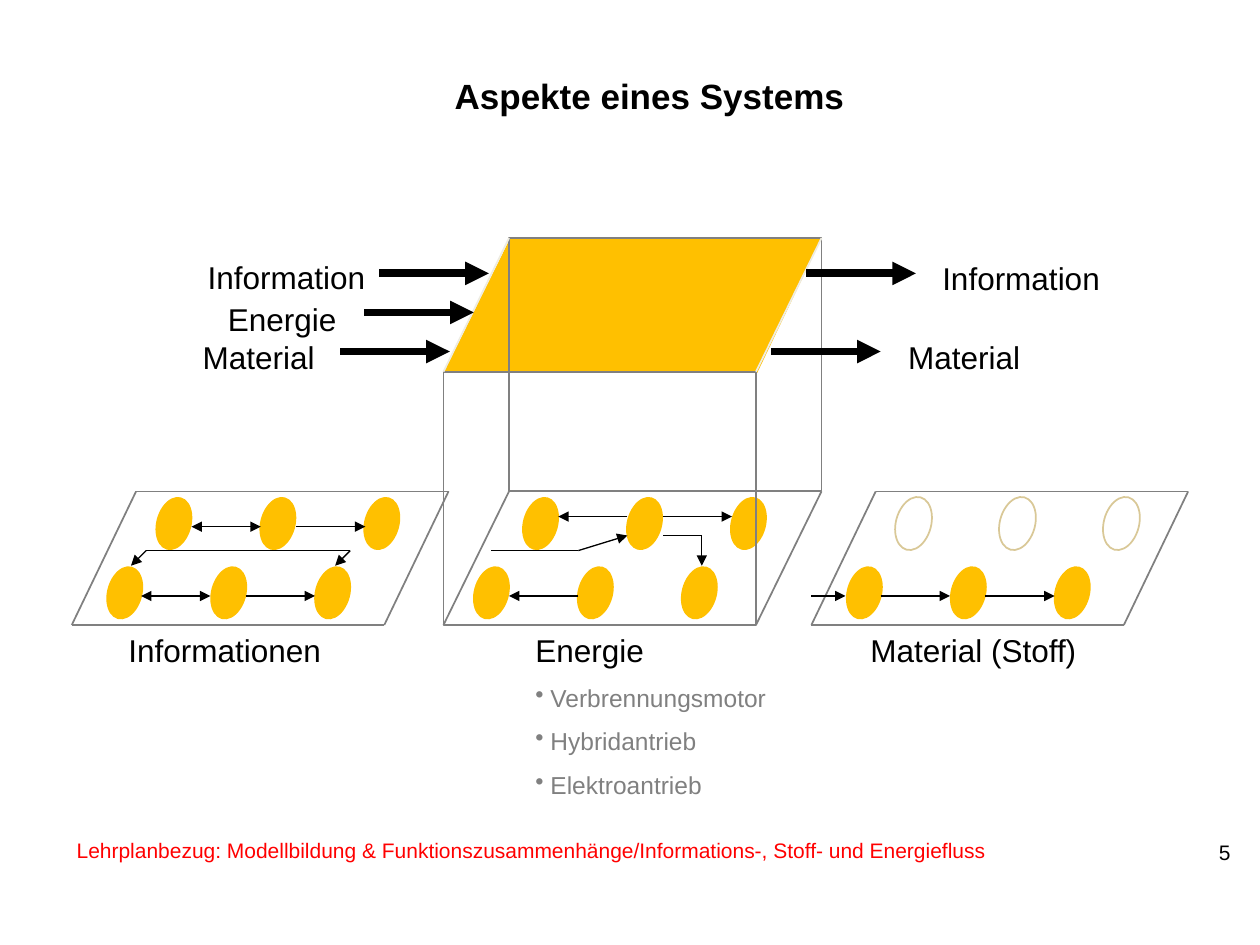
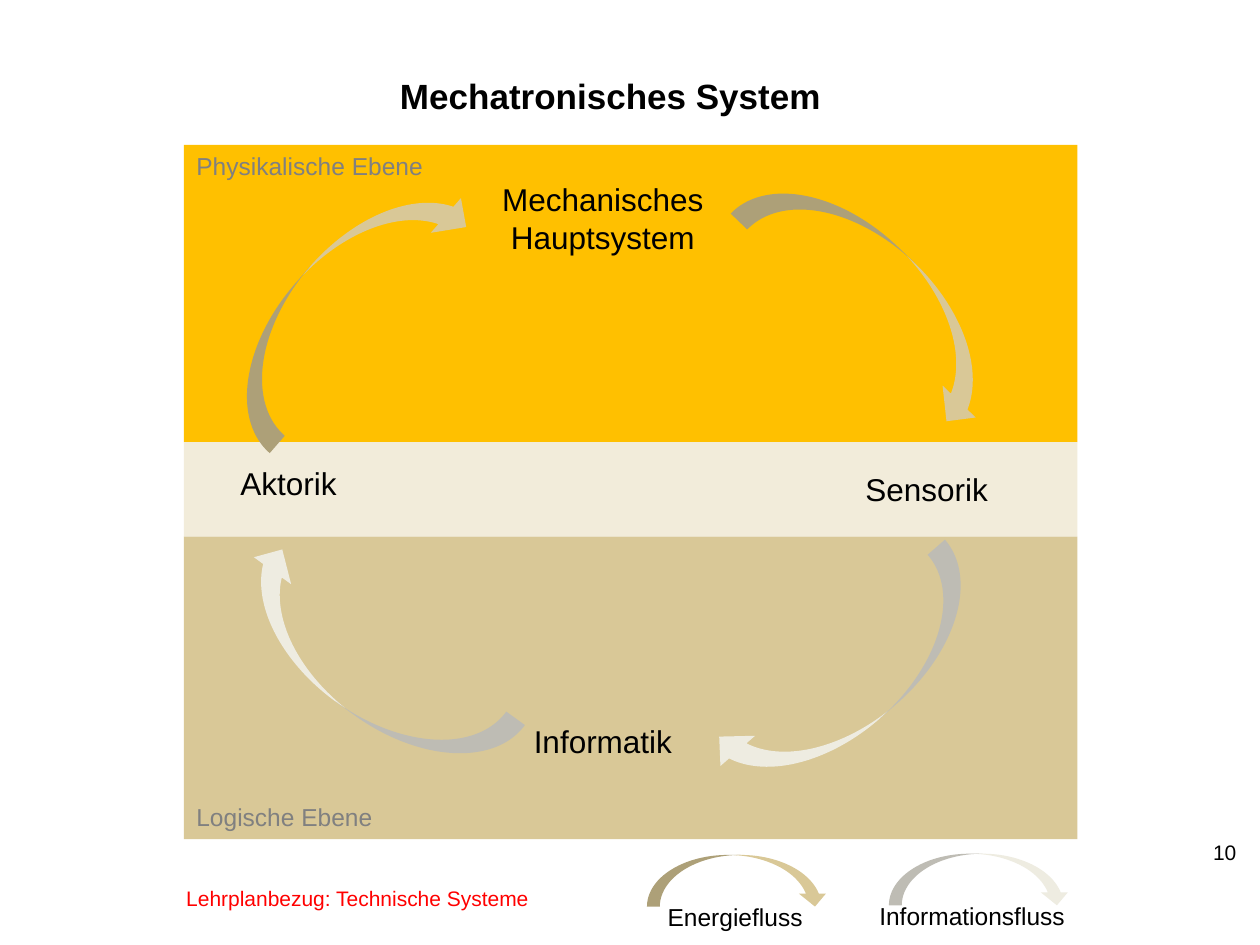
from lxml import etree
from pptx import Presentation
from pptx.dml.color import RGBColor
from pptx.enum.shapes import MSO_CONNECTOR, MSO_SHAPE
from pptx.enum.text import MSO_ANCHOR, PP_ALIGN
from pptx.oxml.ns import qn
from pptx.util import Inches, Pt

LEFT, CENTER = PP_ALIGN.LEFT, PP_ALIGN.CENTER
TOP, MIDDLE = MSO_ANCHOR.TOP, MSO_ANCHOR.MIDDLE
OVAL, RECT = MSO_SHAPE.OVAL, MSO_SHAPE.RECTANGLE
CURVED = MSO_SHAPE.CURVED_LEFT_ARROW
STRAIGHT = MSO_CONNECTOR.STRAIGHT

FONT = "Arial"
BLACK, GRAY, RED = "000000", "808080", "FF0000"
GOLD, SAND, CREAM, PALE = "FFC000", "D9C897", "F2ECDA", "EEECE1"


def rgb(code):
    """Turn a hex string into a colour."""
    return RGBColor.from_string(code)


def add_text(slide, box, lines, size=18, color=BLACK, bold=False,
             align=LEFT, anchor=TOP):
    """Add a text box with one paragraph per line."""
    frame = slide.shapes.add_textbox(*map(Inches, box)).text_frame
    frame.word_wrap = True
    frame.vertical_anchor = anchor
    for i, line in enumerate(lines):
        para = frame.paragraphs[0] if i == 0 else frame.add_paragraph()
        para.alignment = align
        add_run(para, line, size, color, bold)
    return frame


def add_run(para, text, size, color, bold=False):
    """Add one styled run to a paragraph."""
    run = para.add_run()
    run.text = text
    run.font.name = FONT
    run.font.size = Pt(size)
    run.font.bold = bold
    run.font.color.rgb = rgb(color)


def add_bullet(frame, text):
    """Add a small gray bullet line to a text frame."""
    para = frame.add_paragraph()
    para.space_before = Pt(8)
    props = para._p.get_or_add_pPr()
    props.set("marL", str(Inches(0.12)))
    props.set("indent", str(-Inches(0.12)))
    etree.SubElement(props, qn("a:buChar"), char="•")
    add_run(para, text, 14, GRAY)


def paint(shape, fill=None, line=None):
    """Set fill and outline of a shape and drop its shadow."""
    shape.shadow.inherit = False
    if fill:
        shape.fill.solid()
        shape.fill.fore_color.rgb = rgb(fill)
    else:
        shape.fill.background()
    if line:
        shape.line.color.rgb = rgb(line)
        shape.line.width = Pt(1)
    else:
        shape.line.fill.background()


def add_shape(slide, kind, box, fill=None, line=None, turn=0):
    """Add a painted preset shape."""
    shape = slide.shapes.add_shape(kind, *map(Inches, box))
    shape.rotation = turn
    paint(shape, fill, line)
    return shape


def add_line(slide, start, end, color=BLACK, width=0.75, ends=()):
    """Add a straight line with triangles at the named ends."""
    line = slide.shapes.add_connector(STRAIGHT, *map(Inches, start + end))
    line.line.color.rgb = rgb(color)
    line.line.width = Pt(width)
    for name in ends:
        etree.SubElement(line.line._get_or_add_ln(), qn("a:" + name), type="triangle")
    etree.SubElement(line._element.spPr, qn("a:effectLst"))


def add_arrow(slide, start, end, width=0.75, both=False):
    """Add an arrow, pointing both ways if asked."""
    ends = ("headEnd", "tailEnd") if both else ("tailEnd",)
    add_line(slide, start, end, width=width, ends=ends)


def add_frame(slide, title, left, page, note, spot):
    """Add title, page number and curriculum note."""
    add_text(slide, (left, 0.32, 5.51, 0.87), [title], 20, bold=True,
             align=CENTER, anchor=MIDDLE)
    add_text(slide, (9.48, 6.5, 0.48, 0.52), [page], 12, align=CENTER, anchor=MIDDLE)
    add_text(slide, spot, ["Lehrplanbezug: " + note], 12, RED)


def add_nodes(slide, left, hollow=False):
    """Add two shifted rows of three tilted nodes."""
    for i in range(3):
        x = left + 0.825 * i
        upper = (None, SAND) if hollow else (GOLD, None)
        add_shape(slide, OVAL, (x, 3.94, 0.28, 0.43), *upper, turn=15)
        add_shape(slide, OVAL, (x - 0.39, 4.49, 0.28, 0.43), GOLD, turn=15)


def add_plane(slide, left):
    """Add the slanted outline of a plane."""
    points = [(left, 4.96), (left + 2.48, 4.96), (left + 2.99, 3.9), (left + 0.51, 3.9)]
    for start, end in zip(points, points[1:] + points[:1]):
        add_line(slide, start, end, GRAY, 1)


def add_box(slide):
    """Add the see-through box with its golden lid."""
    points = [(3.52, 2.96), (4.05, 1.89), (6.52, 1.89), (6.01, 2.96)]
    spots = [(Inches(x), Inches(y)) for x, y in points]
    form = slide.shapes.build_freeform(*spots[0])
    form.add_line_segments(spots[1:], close=True)
    paint(form.convert_to_shape(), GOLD)
    add_nodes(slide, 4.15)
    for x, y in ((3.52, 2.95), (4.04, 1.89)):
        add_shape(slide, RECT, (x, y, 2.48, 2.01), line=GRAY)
    for y, color in ((4.96, GRAY), (2.95, PALE)):
        for x in (3.52, 6):
            add_line(slide, (x, y), (x + 0.52, y - 1.06), color, 1)


def add_flows(slide):
    """Add the thin arrows between the nodes."""
    for y, x in ((4.18, 1.52), (4.73, 1.12)):
        add_arrow(slide, (x, y), (x + 0.55, y), both=True)
        add_arrow(slide, (x + 0.83, y), (x + 1.38, y))
    add_line(slide, (1.16, 4.37), (2.78, 4.37))
    for x in (1.16, 2.78):
        add_arrow(slide, (x, 4.37), (x - 0.12, 4.49))

    add_line(slide, (3.9, 4.37), (4.59, 4.37))
    add_line(slide, (5.57, 4.25), (5.26, 4.25))
    for start, end in (((4.59, 4.37), (4.98, 4.25)), ((4.98, 4.1), (4.43, 4.1)),
                       ((5.26, 4.1), (5.81, 4.1)), ((4.59, 4.73), (4.04, 4.73)),
                       ((5.57, 4.25), (5.57, 4.49))):
        add_arrow(slide, start, end)

    for x, end in ((6.44, 6.71), (6.99, 7.54), (7.82, 8.37)):
        add_arrow(slide, (x, 4.73), (end, 4.73))


def add_aspects(slide):
    """Fill the slide on the aspects of a system."""
    add_frame(slide, "Aspekte eines Systems", 2.4, "5",
              "Modellbildung & Funktionszusammenhänge/Informations-, "
              "Stoff- und Energiefluss", (0.51, 6.6, 8.35, 0.3))
    add_box(slide)
    add_plane(slide, 0.57)
    add_nodes(slide, 1.24)
    add_plane(slide, 6.44)
    add_nodes(slide, 7.11, hollow=True)
    add_flows(slide)
    for x, y in ((3.01, 2.17), (2.89, 2.48), (2.7, 2.79), (6.4, 2.17), (6.12, 2.79)):
        add_arrow(slide, (x, y), (x + 0.87, y), 4.5)
    for word, x, y in (("Information", 1.55, 2), ("Energie", 1.71, 2.33),
                       ("Material", 1.51, 2.63), ("Information", 7.38, 2.01),
                       ("Material", 7.11, 2.63), ("Informationen", 0.92, 4.96),
                       ("Material (Stoff)", 6.81, 4.96)):
        add_text(slide, (x, y, 2.05, 0.4), [word])
    drives = add_text(slide, (4.15, 4.96, 2.09, 1.46), ["Energie"])
    for word in ("Verbrennungsmotor", "Hybridantrieb", "Elektroantrieb"):
        add_bullet(drives, word)


def add_cycle(slide):
    """Fill the slide on the mechatronic system."""
    for y, height, color in ((1.15, 2.36, GOLD), (3.51, 0.75, CREAM), (4.26, 2.4, SAND)):
        add_shape(slide, RECT, (1.46, y, 7.09, height), color)
    add_frame(slide, "Mechatronisches System", 2.09, "10",
              "Technische Systeme", (1.38, 6.98, 3.86, 0.3))
    for y, word in ((1.15, "Physikalische Ebene"), (6.32, "Logische Ebene")):
        add_text(slide, (1.46, y, 2.72, 0.34), [word], 14, GRAY)
    add_text(slide, (3.86, 1.38, 1.85, 0.71), ["Mechanisches", "Hauptsystem"],
             align=CENTER)
    add_text(slide, (3.86, 5.68, 1.85, 0.4), ["Informatik"], align=CENTER)
    add_text(slide, (1.81, 3.63, 1.1, 0.4), ["Aktorik"])
    add_text(slide, (6.77, 3.68, 1.3, 0.4), ["Sensorik"])
    for x, y, turn, color in ((2.34, 1.11, 221, SAND), (2.55, 4.02, 125.9, PALE),
                              (6.41, 4.12, 48.9, PALE), (6.61, 1.04, 313.9, SAND)):
        add_shape(slide, CURVED, (x, y, 0.73, 2.56), color, turn=turn)
    add_key(slide, (5.65, 6.27), SAND, "Energiefluss", (5.2, 7.11))
    add_key(slide, (7.57, 6.26), PALE, "Informationsfluss", (6.88, 7.1))


def add_key(slide, spot, color, word, place):
    """Add a legend arrow with its label."""
    arrow = add_shape(slide, CURVED, spot + (0.41, 1.44), color, turn=270)
    arrow.adjustments[1] = 0.52
    add_text(slide, place + (1.98, 0.34), [word], 14)


def main():
    """Build and save both slides."""
    deck = Presentation()
    deck.slide_width, deck.slide_height = Inches(10), Inches(7.5)
    for fill in (add_aspects, add_cycle):
        fill(deck.slides.add_slide(deck.slide_layouts[6]))
    deck.save("out.pptx")


if __name__ == "__main__":
    main()
